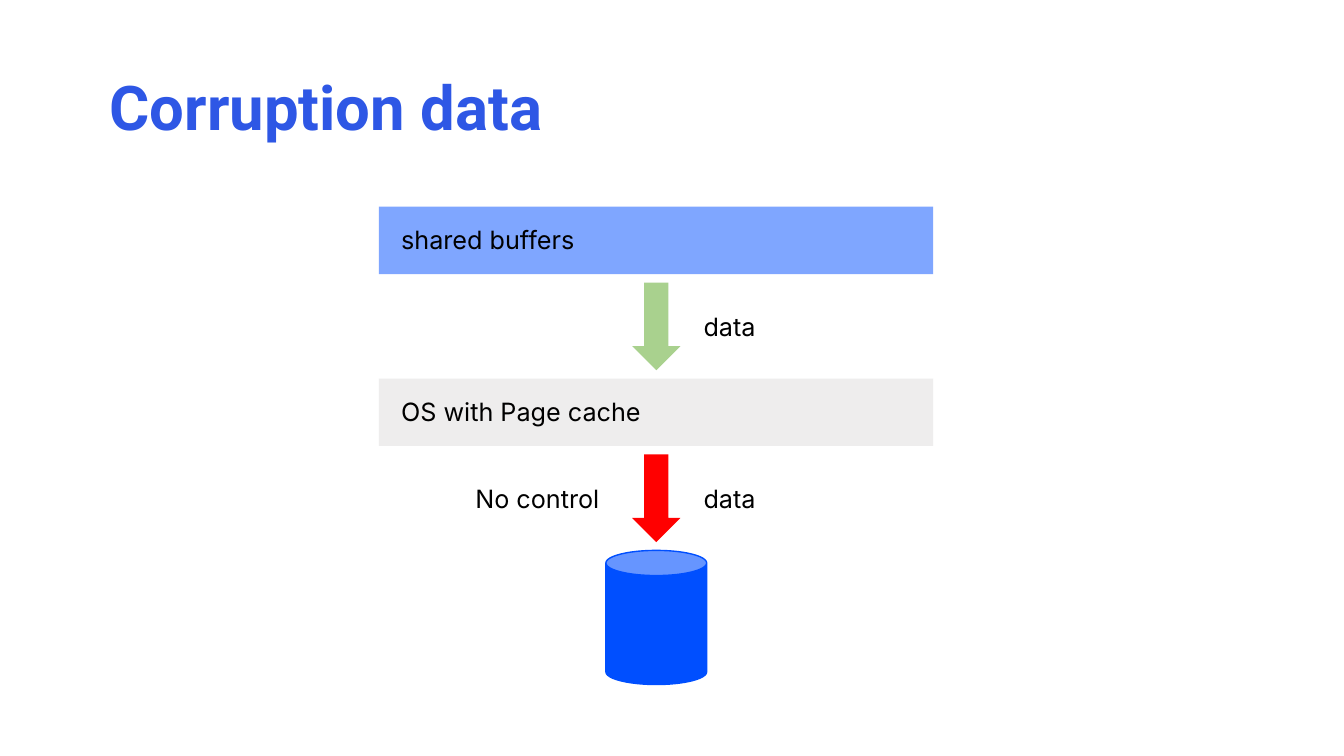
from lxml.etree import SubElement
from pptx import Presentation
from pptx.dml.color import RGBColor as RGB
from pptx.enum.shapes import MSO_SHAPE as Kind
from pptx.enum.text import MSO_ANCHOR as Anchor, MSO_AUTO_SIZE as Fit, PP_ALIGN as Align
from pptx.oxml.ns import qn
from pptx.util import Cm, Pt

COLORS = {
    "title": "2E57E5",
    "text": "000000",
    "blue": "004FFF",
    "gray": "E7E6E6",
    "green": "A9D18E",
    "red": "FF0000",
}
STEP = 4.33


def color(name):
    return RGB.from_string(COLORS[name])


def style(para, face, size, tint, bold=False):
    para.alignment = Align.LEFT
    font = para.font
    font.name = face
    font.size = Pt(size)
    font.bold = bold
    font.color.rgb = color(tint)


def add_title(slide, text):
    title = slide.shapes.title
    title.left, title.top = Cm(2.51), Cm(1.98)
    title.width, title.height = Cm(18.34), Cm(3.43)
    frame = title.text_frame
    frame.text = text
    frame.auto_size = Fit.NONE
    frame.vertical_anchor = Anchor.TOP
    para = frame.paragraphs[0]
    para.line_spacing = 0.8
    style(para, "Roboto", 44, "title", True)


def add_block(slide, kind, box, tint, alpha=100):
    block = slide.shapes.add_shape(kind, *map(Cm, box))
    block.shadow.inherit = False
    block.fill.solid()
    block.fill.fore_color.rgb = color(tint)
    block.line.fill.background()
    if alpha < 100:
        fill = block.fill._xPr.find(qn("a:solidFill"))
        SubElement(fill[0], qn("a:alpha"), val=str(alpha * 1000))
    return block


def add_label(slide, text, left, top, width):
    label = slide.shapes.add_textbox(Cm(left), Cm(top), Cm(width), Cm(1.02))
    frame = label.text_frame
    frame.word_wrap = True
    frame.auto_size = Fit.SHAPE_TO_FIT_TEXT
    frame.text = text
    style(frame.paragraphs[0], "Inter", 18, "text")


def add_stage(slide, row, text, tint, alpha, flow):
    drop = row * STEP
    add_block(slide, Kind.RECTANGLE, (9.55, 5.21 + drop, 13.97, 1.7), tint, alpha)
    add_label(slide, text, 9.86, 5.54 + drop, 6.68)
    add_block(slide, Kind.DOWN_ARROW, (15.93, 7.12 + drop, 1.22, 2.21), flow)
    add_label(slide, "data", 17.48, 7.72 + drop, 1.98)


def add_disk(slide):
    disk = add_block(slide, Kind.CAN, (15.27, 13.87, 2.54, 3.38), "blue")
    disk.line.color.rgb = color("blue")
    disk.line.width = Pt(1)


def main():
    deck = Presentation()
    deck.slide_width, deck.slide_height = Cm(33.87), Cm(19.05)
    slide = deck.slides.add_slide(deck.slide_layouts[5])
    add_title(slide, "Corruption data")
    stages = [
        ("shared buffers", "blue", 50, "green"),
        ("OS with Page cache", "gray", 70, "red"),
    ]
    for row, stage in enumerate(stages):
        add_stage(slide, row, *stage)
    add_label(slide, "No control", 11.73, 7.72 + STEP, 3.66)
    add_disk(slide)
    deck.save("out.pptx")


if __name__ == "__main__":
    main()
